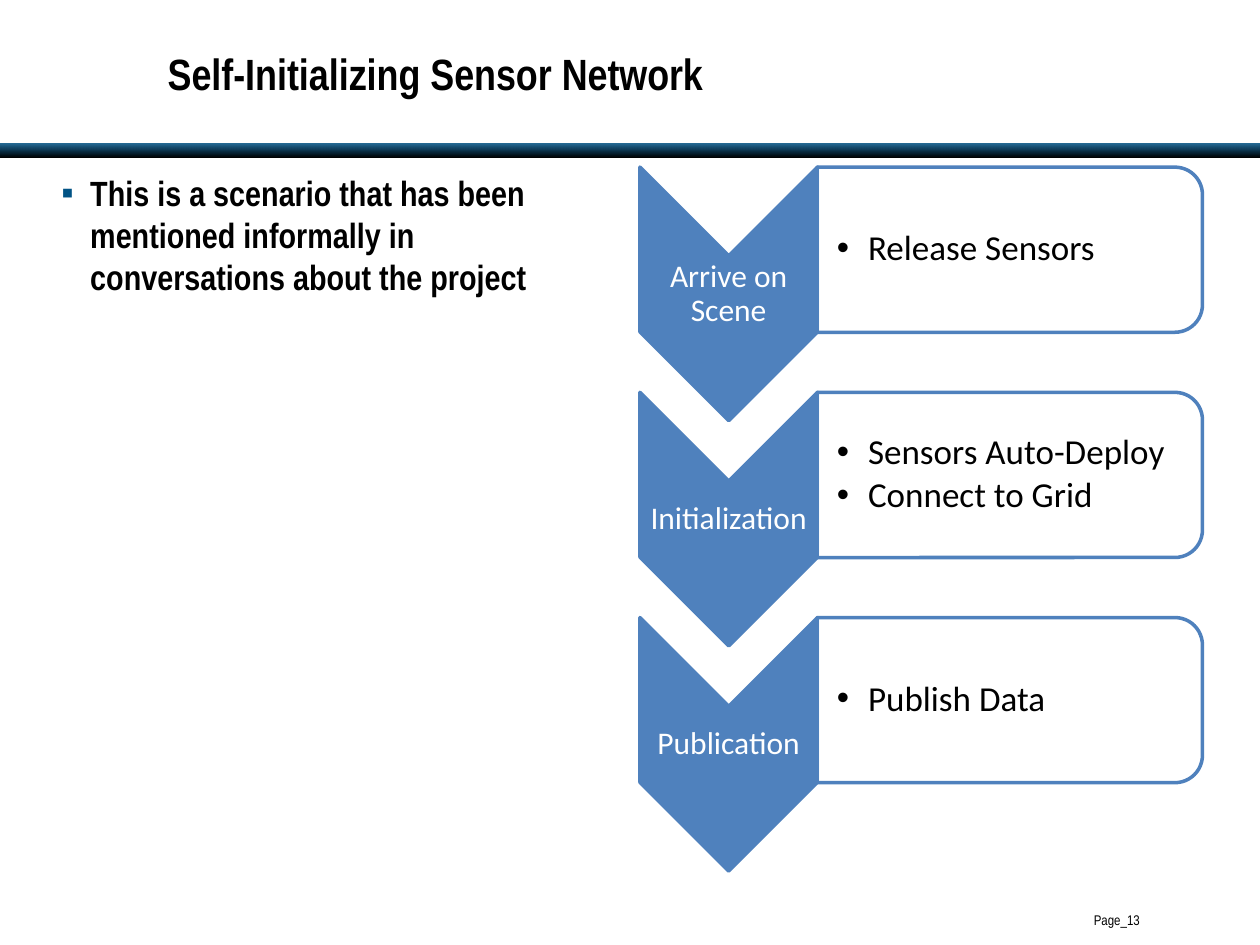
from dataclasses import dataclass

import pptx
import pptx.dml.color
import pptx.enum.shapes
import pptx.enum.text
import pptx.oxml
import pptx.oxml.ns
import pptx.util
from pptx.util import Cm, Pt

RGBColor = pptx.dml.color.RGBColor
MSO_SHAPE = pptx.enum.shapes.MSO_SHAPE
MSO_ANCHOR = pptx.enum.text.MSO_ANCHOR
PP_ALIGN = pptx.enum.text.PP_ALIGN

BLACK = RGBColor(0x00, 0x00, 0x00)
WHITE = RGBColor(0xFF, 0xFF, 0xFF)
TEAL = RGBColor(0x01, 0x53, 0x85)
BLUE = RGBColor(0x4F, 0x81, 0xBD)

HEADING_FONT = "Arial Narrow"
DIAGRAM_FONT = "Calibri"

FIRST_TOP = 3.37
STAGE_PITCH = 4.54
CHEVRON_LEFT, CHEVRON_WIDTH, CHEVRON_HEIGHT = 12.9, 3.58, 5.11
PANEL_LEFT, PANEL_WIDTH, PANEL_HEIGHT = 16.47, 7.77, 3.33


@dataclass(frozen=True)
class Box:
    """Frame as it appears on the slide, in centimetres."""
    left: float
    top: float
    width: float
    height: float


@dataclass(frozen=True)
class Stage:
    name: str
    actions: tuple[str, ...]


STAGES = (
    Stage("Arrive on Scene", ("Release Sensors",)),
    Stage("Initialization", ("Sensors Auto-Deploy", "Connect to Grid")),
    Stage("Publication", ("Publish Data",)),
)


def add_xml(parent, tag: str, **attributes: str):
    return pptx.oxml.ns and _append(parent, tag, attributes)


def _append(parent, tag: str, attributes: dict[str, str]):
    child = parent.makeelement(pptx.oxml.ns.qn(tag), attributes)
    parent.append(child)
    return child


def set_opacity(fill_part, percent: int) -> None:
    """Make the RGB colour inside a fill or gradient stop translucent."""
    colour = next(fill_part.iter(pptx.oxml.ns.qn("a:srgbClr")))
    add_xml(colour, "a:alpha", val=str(percent * 1000))


def place(shape, box: Box) -> None:
    shape.left, shape.top = Cm(box.left), Cm(box.top)
    shape.width, shape.height = Cm(box.width), Cm(box.height)


def set_frame(frame, inset: float, anchor) -> None:
    frame.word_wrap = True
    frame.auto_size = pptx.enum.text.MSO_AUTO_SIZE.NONE
    frame.vertical_anchor = anchor
    frame.margin_left = frame.margin_right = Cm(inset)
    frame.margin_top = frame.margin_bottom = Cm(inset)


def add_frame(slide, box: Box, inset: float, anchor=MSO_ANCHOR.MIDDLE):
    frame = slide.shapes.add_textbox(0, 0, 0, 0)
    place(frame, box)
    set_frame(frame.text_frame, inset, anchor)
    return frame.text_frame


def add_run(paragraph, text: str, font: str, size: float, colour: RGBColor,
            bold: bool = False) -> None:
    run = paragraph.add_run()
    run.text = text
    run.font.name = font
    run.font.size = Pt(size)
    run.font.color.rgb = colour
    run.font.bold = bold


def set_bullet(paragraph, mark: str, indent: float,
               colour: RGBColor = BLACK) -> None:
    properties = paragraph._p.get_or_add_pPr()
    properties.set("marL", str(Cm(indent)))
    properties.set("indent", str(-Cm(indent)))
    bullet_colour = add_xml(properties, "a:buClr")
    add_xml(bullet_colour, "a:srgbClr", val=str(colour))
    add_xml(properties, "a:buFont", typeface="Arial")
    add_xml(properties, "a:buChar", char=mark)


def add_turned_shape(slide, preset, box: Box, fill: RGBColor):
    """Add a shape turned 90 degrees clockwise so that it covers the box."""
    shape = slide.shapes.add_shape(
        preset,
        Cm(box.left + (box.width - box.height) / 2),
        Cm(box.top + (box.height - box.width) / 2),
        Cm(box.height), Cm(box.width))
    shape.rotation = 90
    shape.shadow.inherit = False
    shape.fill.solid()
    shape.fill.fore_color.rgb = fill
    shape.line.color.rgb = BLUE
    shape.line.width = Pt(2)
    add_xml(shape.line._get_or_add_ln(), "a:round")
    return shape


def add_header_band(slide) -> None:
    band = slide.shapes.add_shape(MSO_SHAPE.RECTANGLE, 0, 0, 0, 0)
    place(band, Box(0, 2.9, 25.4, 0.28))
    band.shadow.inherit = False
    band.line.fill.background()
    band.fill.gradient()
    band.fill.gradient_angle = 270
    for stop, position, colour in zip(band.fill.gradient_stops, (0, 1), (TEAL, BLACK)):
        stop.position = position
        stop.color.rgb = colour
    set_opacity(band._element.spPr, 60)


def add_stage(slide, stage: Stage, top: float) -> None:
    add_turned_shape(slide, MSO_SHAPE.CHEVRON,
                     Box(CHEVRON_LEFT, top, CHEVRON_WIDTH, CHEVRON_HEIGHT), BLUE)
    label = add_frame(slide, Box(CHEVRON_LEFT, top + CHEVRON_WIDTH / 2,
                                 CHEVRON_WIDTH, CHEVRON_HEIGHT - CHEVRON_WIDTH), 0.03)
    name = label.paragraphs[0]
    name.alignment = PP_ALIGN.CENTER
    name.line_spacing = 0.9
    add_run(name, stage.name, DIAGRAM_FONT, 18, WHITE)

    panel = add_turned_shape(slide, MSO_SHAPE.ROUND_2_SAME_RECTANGLE,
                             Box(PANEL_LEFT, top, PANEL_WIDTH, PANEL_HEIGHT), WHITE)
    set_opacity(panel._element.spPr, 90)
    actions = add_frame(slide, Box(PANEL_LEFT, top + 0.16, 7.62, 3), 0.03)
    actions.margin_left = Cm(0.4)
    for index, action in enumerate(stage.actions):
        item = actions.add_paragraph() if index else actions.paragraphs[0]
        item.level = 1
        item.line_spacing = 0.9
        item.space_after = Pt(3)
        set_bullet(item, "•", 0.63)
        add_run(item, action, DIAGRAM_FONT, 20, BLACK)


def main() -> None:
    deck = pptx.Presentation()
    deck.slide_width, deck.slide_height = Cm(25.4), Cm(19.05)
    slide = deck.slides.add_slide(deck.slide_layouts[5])

    for _ in range(2):  # two translucent layers deepen the band
        add_header_band(slide)

    title = slide.shapes.title
    place(title, Box(3.28, 0.4, 20.98, 2.14))
    set_frame(title.text_frame, 0.1, MSO_ANCHOR.MIDDLE)
    heading = title.text_frame.paragraphs[0]
    heading.alignment = PP_ALIGN.LEFT
    add_run(heading, "Self-Initializing Sensor Network", HEADING_FONT, 25, BLACK, bold=True)

    body = add_frame(slide, Box(1.14, 3.35, 11.35, 14.2), 0.1, MSO_ANCHOR.TOP)
    scenario = body.paragraphs[0]
    set_bullet(scenario, "▪", 0.58, TEAL)
    add_run(scenario, "This is a scenario that has been mentioned informally in "
            "conversations about the project", HEADING_FONT, 20, BLACK, bold=True)

    for index, stage in enumerate(STAGES):
        add_stage(slide, stage, FIRST_TOP + index * STAGE_PITCH)

    page = add_frame(slide, Box(21.95, 18.31, 3.07, 0.46), 0.1)
    add_run(page.paragraphs[0], "Page_13", HEADING_FONT, 8, BLACK)

    deck.save("out.pptx")


if __name__ == "__main__":
    main()
